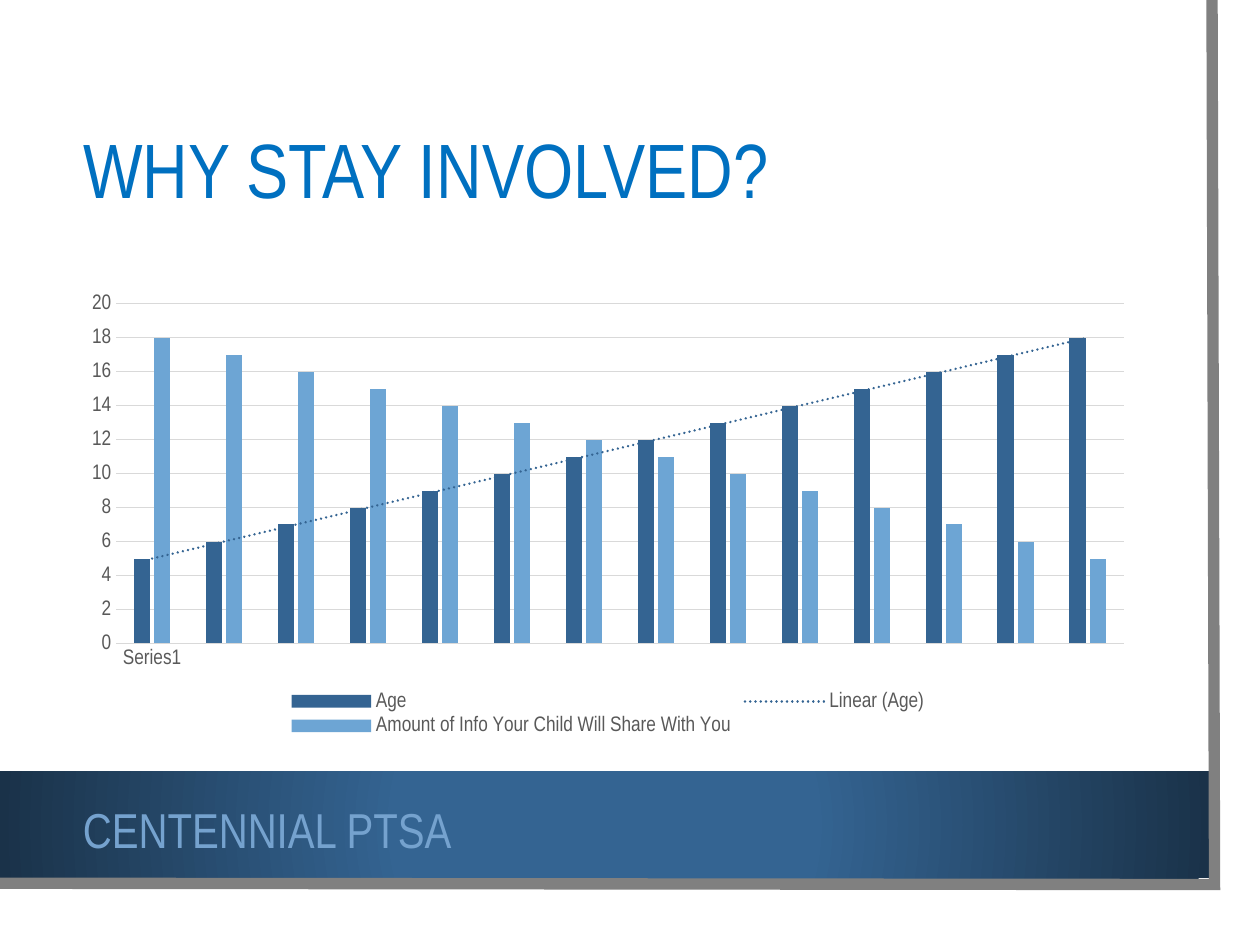
import pptx
import pptx.chart.data
import pptx.dml.color
import pptx.enum.chart
import pptx.enum.shapes
import pptx.enum.text
import pptx.oxml
import pptx.oxml.ns
import pptx.util
from pptx.util import Inches

COLORS = {
    "paper": "FFFFFF",
    "frame": "808080",
    "title": "0070C0",
    "footer": "75A2CE",
    "age": "346492",
    "share": "6DA5D4",
    "band_edge": "1A3249",
    "labels": "595959",
    "grid": "D9D9D9",
}
AGES = list(range(5, 19))


class SlideBuilder:
    font = "Arial Narrow"

    def __init__(self, slide):
        self.slide = slide

    def color(self, key):
        return pptx.dml.color.RGBColor.from_string(COLORS[key])

    def xml(self, tag, body):
        """Parse an element whose children use the a: and c: prefixes."""
        declarations = pptx.oxml.ns.nsdecls("a", "c")
        return pptx.oxml.parse_xml(f"<{tag} {declarations}>{body}</{tag}>")

    def style_font(self, font, size, color):
        font.name = self.font
        font.size = pptx.util.Pt(size)
        font.color.rgb = self.color(color)

    def style_line(self, line, color, width):
        line.color.rgb = self.color(color)
        line.width = pptx.util.Pt(width)

    def rectangle(self, left, top, width, height, fill):
        shape = self.slide.shapes.add_shape(
            pptx.enum.shapes.MSO_SHAPE.RECTANGLE,
            Inches(left), Inches(top), Inches(width), Inches(height))
        shape.shadow.inherit = False
        shape.fill.solid()
        shape.fill.fore_color.rgb = self.color(fill)
        shape.line.fill.background()
        return shape

    def radial_band(self, left, top, width, height, center, edge):
        band = self.rectangle(left, top, width, height, center)
        stops = "".join(
            f'<a:gs pos="{position}"><a:srgbClr val="{COLORS[key]}"/></a:gs>'
            for position, key in ((34000, center), (100000, edge)))
        gradient = self.xml(
            "a:gradFill",
            f'<a:gsLst>{stops}</a:gsLst><a:path path="circle">'
            '<a:fillToRect l="50000" t="50000" r="50000" b="50000"/></a:path>')
        solid = band.element.spPr.find(pptx.oxml.ns.qn("a:solidFill"))
        band.element.spPr.replace(solid, gradient)

    def open_path(self, points, color, width):
        start, *rest = [(Inches(x), Inches(y)) for x, y in points]
        builder = self.slide.shapes.build_freeform(*start)
        builder.add_line_segments(rest, close=False)
        outline = builder.convert_to_shape()
        outline.shadow.inherit = False
        outline.fill.background()
        self.style_line(outline.line, color, width)
        stroke = outline.element.spPr.find(pptx.oxml.ns.qn("a:ln"))
        stroke.append(self.xml("a:miter", ""))

    def set_text(self, shape, text, size, color, line_spacing=1.0):
        frame = shape.text_frame
        frame.text = text
        frame.word_wrap = True
        frame.vertical_anchor = pptx.enum.text.MSO_ANCHOR.MIDDLE
        paragraph = frame.paragraphs[0]
        paragraph.alignment = pptx.enum.text.PP_ALIGN.LEFT
        paragraph.line_spacing = line_spacing
        self.style_font(paragraph.runs[0].font, size, color)

    def title(self, left, top, width, height, text, size, color):
        title = self.slide.shapes.title
        title.left, title.top = Inches(left), Inches(top)
        title.width, title.height = Inches(width), Inches(height)
        self.set_text(title, text, size, color, line_spacing=0.9)
        # Bring the title in front of the background panel
        self.slide.shapes.element.append(title.element)

    def text(self, left, top, width, height, text, size, color):
        box = self.slide.shapes.add_textbox(
            Inches(left), Inches(top), Inches(width), Inches(height))
        self.set_text(box, text, size, color)

    def column_chart(self, left, top, width, height, categories, series):
        """Add clustered columns; series holds (name, values, color key)."""
        data = pptx.chart.data.CategoryChartData()
        data.categories = categories
        for name, values, _ in series:
            data.add_series(name, values)
        chart = self.slide.shapes.add_chart(
            pptx.enum.chart.XL_CHART_TYPE.COLUMN_CLUSTERED,
            Inches(left), Inches(top), Inches(width), Inches(height), data).chart
        chart.has_title = False
        self.style_font(chart.font, 12, "labels")

        plot = chart.plots[0]
        plot.vary_by_categories = False
        plot.gap_width, plot.overlap = 219, -27
        for columns, (_, _, color) in zip(plot.series, series):
            columns.format.fill.solid()
            columns.format.fill.fore_color.rgb = self.color(color)

        for axis in (chart.category_axis, chart.value_axis):
            axis.major_tick_mark = pptx.enum.chart.XL_TICK_MARK.NONE
            axis.minor_tick_mark = pptx.enum.chart.XL_TICK_MARK.NONE
            self.style_font(axis.tick_labels.font, 12, "labels")
        self.style_line(chart.category_axis.format.line, "grid", 0.75)
        values_axis = chart.value_axis
        values_axis.minimum_scale, values_axis.maximum_scale = 0, 20
        values_axis.major_unit = 2
        values_axis.format.line.fill.background()
        self.style_line(values_axis.major_gridlines.format.line, "grid", 0.75)

        chart.has_legend = True
        chart.legend.position = pptx.enum.chart.XL_LEGEND_POSITION.BOTTOM
        chart.legend.include_in_layout = False
        self.style_font(chart.legend.font, 12, "labels")
        return chart

    def linear_trend(self, series, color, width):
        trend = self.xml(
            "c:trendline",
            f'<c:spPr><a:ln w="{int(pptx.util.Pt(width))}" cap="rnd"><a:solidFill>'
            f'<a:srgbClr val="{COLORS[color]}"/></a:solidFill>'
            '<a:prstDash val="sysDot"/></a:ln></c:spPr>'
            '<c:trendlineType val="linear"/>'
            '<c:dispRSqr val="0"/><c:dispEq val="0"/>')
        categories = series._element.find(pptx.oxml.ns.qn("c:cat"))
        categories.addprevious(trend)


def main():
    deck = pptx.Presentation()
    deck.slide_width, deck.slide_height = Inches(10), Inches(7.5)
    page = SlideBuilder(deck.slides.add_slide(deck.slide_layouts[5]))

    page.rectangle(0, 0, 9.83, 7.27, "paper")
    page.radial_band(0, 6.12, 9.6, 0.85, "age", "band_edge")
    page.open_path([(9.62, 0), (9.64, 7.02), (-0.02, 7.01)], "frame", 6.5)

    page.title(0.56, 0.75, 8.53, 1.26, "WHY STAY INVOLVED?", 44, "title")
    chart = page.column_chart(
        0.56, 2.26, 8.53, 3.62,
        ["Series1"] + [""] * (len(AGES) - 1),
        [("Age", AGES, "age"),
         ("Amount of Info Your Child Will Share With You", AGES[::-1], "share")])
    page.linear_trend(chart.plots[0].series[0], "age", 1.5)
    page.text(0.56, 6.3, 4.51, 0.55, "CENTENNIAL PTSA", 28, "footer")

    deck.save("out.pptx")


if __name__ == "__main__":
    main()
